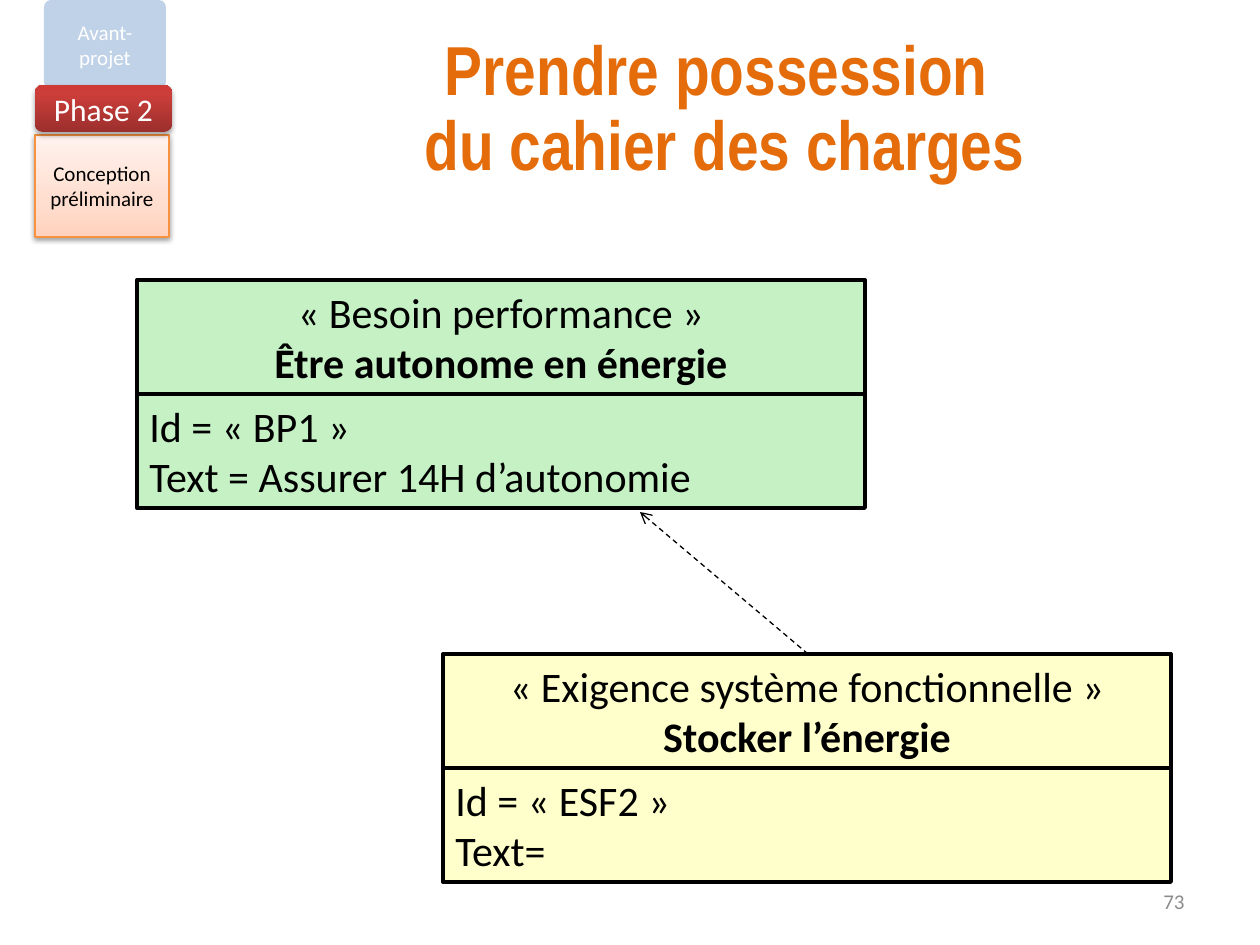
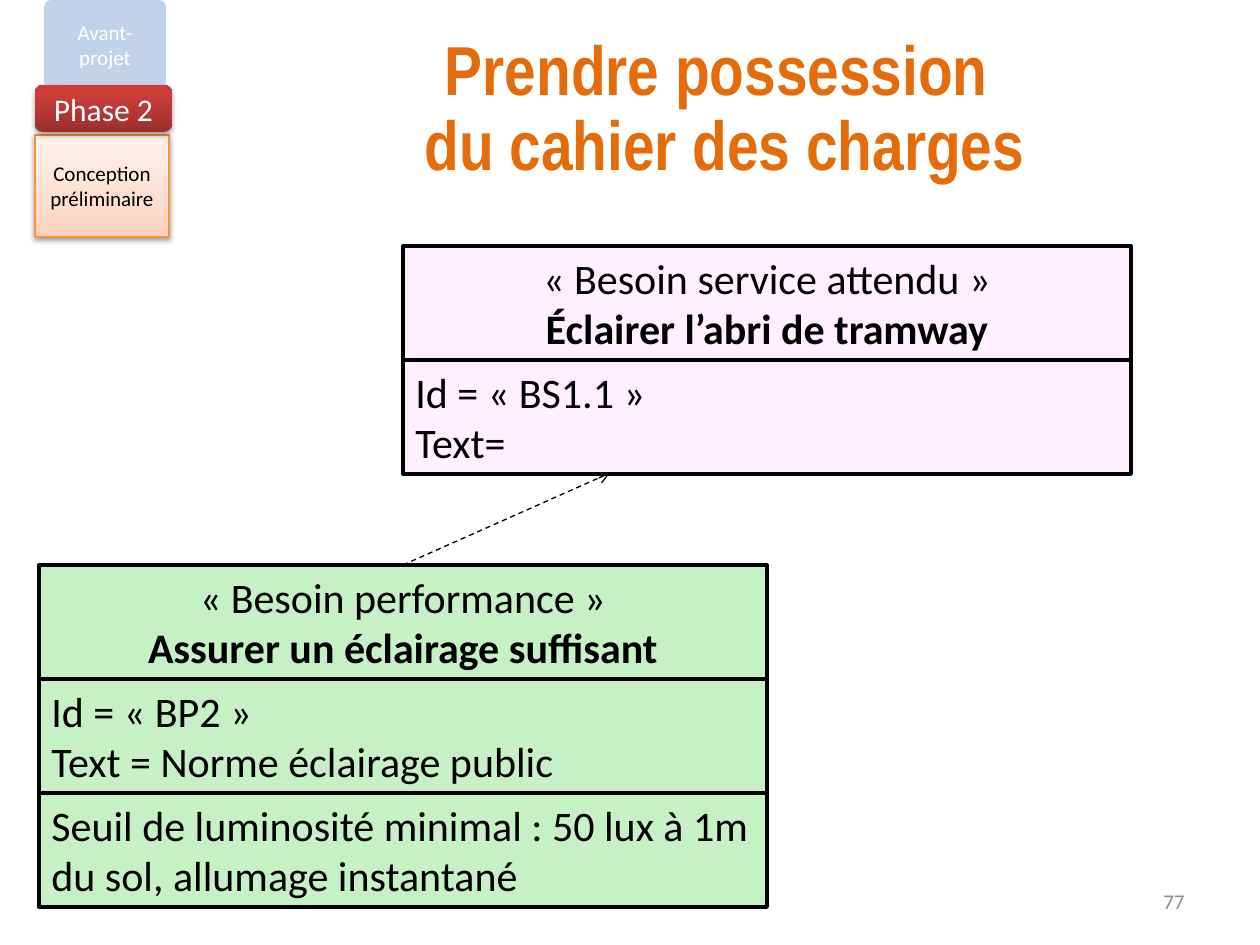
from lxml import etree
from pptx import Presentation
from pptx import util as u
from pptx.dml.color import RGBColor
from pptx.enum import dml, shapes, text
from pptx.oxml.ns import qn

EMU_PER_PX = 914400 / 126

COLOURS = {
    "title": "E46C0A",
    "ink": "000000",
    "light": "FFFFFF",
    "number": "8C8C8C",
    "past_phase": "B9CDE5",
    "step_border": "F69240",
    "performance": "C5F1C5",
    "system": "FFFFCC",
    "service": "FFEFFF",
}
PHASE_STOPS = [(0, "9C2F2D"), (80, "CB3E3A"), (100, "CE3B37")]
STEP_STOPS = [(0, "FFD2BD"), (35, "FFDED0"), (100, "FFF2ED")]

CARD_WIDTH = 728
ROW_HEIGHT = 114


def px(*lengths):
    return [round(length * EMU_PER_PX) for length in lengths]


def rgb(name):
    return RGBColor.from_string(COLOURS[name])


def add_colour(parent, hex_colour, alpha=None):
    colour = etree.SubElement(parent, qn("a:srgbClr"), val=hex_colour)
    if alpha is not None:
        etree.SubElement(colour, qn("a:alpha"), val=str(alpha * 1000))


class Deck:
    """Holds the shared style and the slide being built."""

    def __init__(self):
        self.prs = Presentation()
        self.prs.slide_width, self.prs.slide_height = px(1260, 945)
        self.slide = None

    def start_slide(self, number):
        """Adds a slide with its title, phase tabs and number."""
        self.slide = self.prs.slides.add_slide(self.prs.slide_layouts[5])
        self.title("Prendre possession ", "du cahier des charges")
        self.phase_tabs()
        self.number(number)

    def set_text(self, shape, lines, size, colour="ink", align=text.PP_ALIGN.CENTER,
                 anchor=text.MSO_ANCHOR.MIDDLE, font="Calibri", bold_lines=()):
        frame = shape.text_frame
        frame.word_wrap = True
        frame.auto_size = text.MSO_AUTO_SIZE.NONE
        frame.vertical_anchor = anchor
        frame.text = "\n".join(lines)
        for index, paragraph in enumerate(frame.paragraphs):
            paragraph.alignment = align
            paragraph.font.name = font
            paragraph.font.size = u.Pt(size)
            paragraph.font.bold = index in bold_lines
            paragraph.font.color.rgb = rgb(colour)
        return frame

    def title(self, *lines):
        heading = self.slide.shapes.title
        heading.left, heading.top, heading.width, heading.height = px(164, 26, 1121, 169)
        frame = self.set_text(heading, lines, 39.6, "title", font="Arial Narrow",
                              bold_lines=range(len(lines)))
        for paragraph in frame.paragraphs:
            paragraph.line_spacing = 0.9

    def number(self, number):
        box = self.slide.shapes.add_textbox(*px(903, 876, 294, 50))
        self.set_text(box, [str(number)], 12, "number", text.PP_ALIGN.RIGHT)

    def box(self, kind, place, fill=None, border=None, border_pt=0.75):
        shape = self.slide.shapes.add_shape(kind, *px(*place))
        shape.shadow.inherit = False
        if fill:
            shape.fill.solid()
            shape.fill.fore_color.rgb = rgb(fill)
        if border:
            shape.line.color.rgb = rgb(border)
            shape.line.width = u.Pt(border_pt)
        else:
            shape.line.fill.background()
        return shape

    def gradient(self, shape, stops):
        """Fills the shape from bottom to top."""
        shape.fill.gradient()
        shape.fill.gradient_angle = 90
        stop_list = shape.element.spPr.find(".//" + qn("a:gsLst"))
        for default_stop in list(stop_list):
            stop_list.remove(default_stop)
        for percent, hex_colour in stops:
            stop = etree.SubElement(stop_list, qn("a:gs"), pos=str(percent * 1000))
            add_colour(stop, hex_colour)

    def drop_shadow(self, shape, alpha, distance):
        effects = shape.element.spPr.find(qn("a:effectLst"))
        shadow = etree.SubElement(
            effects, qn("a:outerShdw"), blurRad=str(int(u.Pt(3.1))),
            dist=str(int(u.Pt(distance))), dir="5400000", rotWithShape="0")
        add_colour(shadow, COLOURS["ink"], alpha)

    def phase_tabs(self):
        rounded = shapes.MSO_SHAPE.ROUNDED_RECTANGLE

        past = self.box(rounded, (44, 0, 122, 89), "past_phase")
        past.adjustments[0] = 0.08
        past_colour = past.element.spPr.find(".//" + qn("a:srgbClr"))
        etree.SubElement(past_colour, qn("a:alpha"), val="89000")
        frame = self.set_text(past, ["Avant-projet"], 12, "light")
        frame.margin_top = frame.margin_bottom = 0

        step = self.box(shapes.MSO_SHAPE.RECTANGLE, (35, 135, 134, 102),
                        border="step_border")
        self.gradient(step, STEP_STOPS)
        self.drop_shadow(step, 38, 1.6)
        self.set_text(step, ["Conception préliminaire"], 12)

        phase = self.box(rounded, (35, 85, 137, 47))
        self.gradient(phase, PHASE_STOPS)
        self.drop_shadow(phase, 35, 1.8)
        self.set_text(phase, ["Phase 2"], 18, "light")

    def requirement(self, left, top, fill, stereotype, name, *details):
        """Stacks a centred heading row and left-aligned detail rows."""
        for row, lines in enumerate([(stereotype, name), *details]):
            place = (left, top + row * ROW_HEIGHT, CARD_WIDTH, ROW_HEIGHT)
            cell = self.box(shapes.MSO_SHAPE.RECTANGLE, place, fill, "ink", 2.25)
            is_heading = row == 0
            self.set_text(cell, lines, 24, anchor=text.MSO_ANCHOR.TOP,
                          align=text.PP_ALIGN.CENTER if is_heading else text.PP_ALIGN.LEFT,
                          bold_lines=(1,) if is_heading else ())

    def dependency(self, start, end):
        """Draws a dashed arrow."""
        arrow = self.slide.shapes.add_connector(
            shapes.MSO_CONNECTOR.STRAIGHT, *px(*start, *end))
        arrow.line.color.rgb = rgb("ink")
        arrow.line.width = u.Pt(0.75)
        arrow.line.dash_style = dml.MSO_LINE.DASH
        properties = arrow.element.spPr
        etree.SubElement(properties.find(qn("a:ln")), qn("a:tailEnd"), type="arrow")
        etree.SubElement(properties, qn("a:effectLst"))


def main():
    deck = Deck()

    deck.start_slide(73)
    deck.requirement(443, 654, "system",
                     "« Exigence système fonctionnelle »", "Stocker l’énergie",
                     ("Id = « ESF2 »", "Text="))
    deck.requirement(137, 280, "performance",
                     "« Besoin performance »", "Être autonome en énergie",
                     ("Id = « BP1 »", "Text = Assurer 14H d’autonomie"))
    deck.dependency((808, 654), (640, 512))

    deck.start_slide(77)
    deck.requirement(403, 246, "service",
                     "« Besoin service attendu »", "Éclairer l’abri de tramway",
                     ("Id = « BS1.1 »", "Text="))
    deck.requirement(39, 565, "performance",
                     "« Besoin performance »", "Assurer un éclairage suffisant",
                     ("Id = « BP2 »", "Text = Norme éclairage public"),
                     ("Seuil de luminosité minimal : 50 lux à 1m du sol, "
                      "allumage instantané",))
    deck.dependency((403, 565), (610, 473))

    deck.prs.save("out.pptx")


if __name__ == "__main__":
    main()
